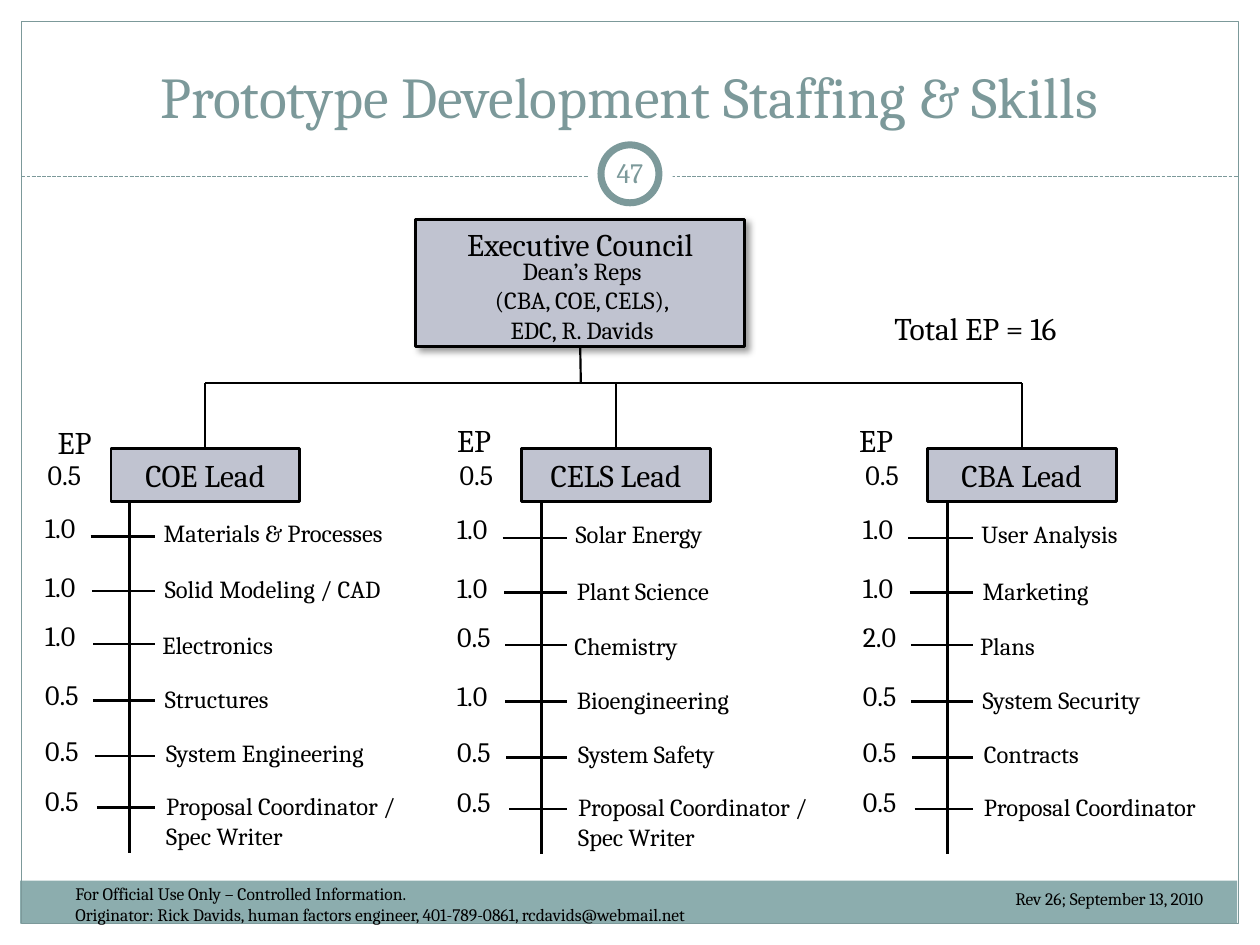
from dataclasses import dataclass

from lxml.etree import SubElement
from pptx import Presentation
from pptx.dml.color import RGBColor
from pptx.enum.dml import MSO_LINE
from pptx.enum.shapes import MSO_CONNECTOR, MSO_SHAPE
from pptx.enum.text import MSO_ANCHOR, MSO_AUTO_SIZE, PP_ALIGN
from pptx.oxml import parse_xml
from pptx.oxml.ns import nsdecls, qn
from pptx.util import Inches, Pt


@dataclass(frozen=True)
class Theme:
    font: str = "Cambria"
    teal: RGBColor = RGBColor(0x7C, 0x99, 0x9A)
    band: RGBColor = RGBColor(0x8C, 0xAD, 0xAE)
    box: RGBColor = RGBColor(0xC0, 0xC3, 0xD0)
    white: RGBColor = RGBColor(0xFF, 0xFF, 0xFF)
    black: RGBColor = RGBColor(0, 0, 0)
    title: int = 33
    heading: int = 18
    value: int = 16
    label: int = 14
    footer: int = 10


theme = Theme()
presentation = Presentation()
presentation.slide_width = Inches(10)
presentation.slide_height = Inches(7.5)
slide = presentation.slides.add_slide(presentation.slide_layouts[5])
shapes = slide.shapes


def write(shape, lines, size, color=theme.black, align=PP_ALIGN.LEFT, anchor=MSO_ANCHOR.TOP):
    """Fill a shape with one paragraph per line."""
    frame = shape.text_frame
    frame.word_wrap = True
    frame.auto_size = MSO_AUTO_SIZE.NONE
    frame.vertical_anchor = anchor
    for index, line in enumerate(lines):
        paragraph = frame.add_paragraph() if index else frame.paragraphs[0]
        paragraph.alignment = align
        run = paragraph.add_run()
        run.text = line
        run.font.name = theme.font
        run.font.size = Pt(size)
        run.font.color.rgb = color


def add_line(x1, y1, x2, y2, width, color=theme.black):
    line = shapes.add_connector(
        MSO_CONNECTOR.STRAIGHT, Inches(x1), Inches(y1), Inches(x2), Inches(y2))
    line.line.width = Pt(width)
    line.line.color.rgb = color
    SubElement(line.element.spPr, qn("a:effectLst"))
    return line


# Title
title = shapes.title
title.left, title.top = Inches(0.33), Inches(0.25)
title.width, title.height = Inches(9.33), Inches(0.83)
write(title, ["Prototype Development Staffing & Skills"], theme.title,
      theme.teal, PP_ALIGN.CENTER, MSO_ANCHOR.BOTTOM)

# Footer band, slide frame, divider and number badge
divider = add_line(0.17, 1.4, 9.83, 1.4, 0.75, theme.teal)
divider.line.dash_style = MSO_LINE.SQUARE_DOT
for kind, left, top, width, height, fill, line_width in [
    (MSO_SHAPE.RECTANGLE, 0.16, 6.99, 9.66, 0.34, theme.band, 0),
    (MSO_SHAPE.RECTANGLE, 0.17, 0.17, 9.66, 7.16, None, 0.75),
    (MSO_SHAPE.OVAL, 4.67, 1.05, 0.67, 0.67, theme.white, 0),
    (MSO_SHAPE.OVAL, 4.77, 1.15, 0.46, 0.46, theme.white, 4),
]:
    shape = shapes.add_shape(kind, Inches(left), Inches(top), Inches(width), Inches(height))
    shape.shadow.inherit = False
    if fill is None:
        shape.fill.background()
    else:
        shape.fill.solid()
        shape.fill.fore_color.rgb = fill
    if line_width:
        shape.line.color.rgb = theme.teal
        shape.line.width = Pt(line_width)
    else:
        shape.line.fill.background()

number = shapes.add_textbox(Inches(4.75), Inches(1.13), Inches(0.5), Inches(0.48))
frame = number.text_frame
frame.margin_left = frame.margin_right = frame.margin_top = frame.margin_bottom = Inches(0.05)
write(number, ["47"], theme.value, theme.teal, PP_ALIGN.CENTER, MSO_ANCHOR.MIDDLE)

# Organisation boxes
boxes = {}
for name, left, top, width, height, anchor in [
    ("Executive Council", 3.3, 1.74, 2.61, 1.01, MSO_ANCHOR.TOP),
    ("COE Lead", 0.88, 3.56, 1.5, 0.42, MSO_ANCHOR.MIDDLE),
    ("CELS Lead", 4.14, 3.56, 1.5, 0.42, MSO_ANCHOR.MIDDLE),
    ("CBA Lead", 7.36, 3.56, 1.5, 0.42, MSO_ANCHOR.MIDDLE),
]:
    box = shapes.add_shape(
        MSO_SHAPE.RECTANGLE, Inches(left), Inches(top), Inches(width), Inches(height))
    box.shadow.inherit = False
    box.fill.solid()
    box.fill.fore_color.rgb = theme.box
    box.line.color.rgb = theme.black
    box.line.width = Pt(1.5)
    write(box, [name], theme.heading, align=PP_ALIGN.CENTER, anchor=anchor)
    boxes[name] = box

council = boxes["Executive Council"]
council.element.spPr.find(qn("a:effectLst")).append(parse_xml(
    f'<a:outerShdw {nsdecls("a")} blurRad="50800" dist="38100" dir="2700000">'
    '<a:srgbClr val="000000"><a:alpha val="40000"/></a:srgbClr></a:outerShdw>'))

# Lines from the council to the leads
bus_y = 3.04
add_line(1.63, bus_y, 8.11, bus_y, 1.25)
add_line(4.61, 2.75, 4.61, bus_y, 1.25).begin_connect(council, 2)
for name, x in [("COE Lead", 1.63), ("CELS Lead", 4.89), ("CBA Lead", 8.11)]:
    add_line(x, bus_y, x, 3.56, 1.25).end_connect(boxes[name], 0)

# Staff columns: trunk x, downward shift, EP heading place, (EP, skill) rows
columns = [
    (1.03, 0, 0.36, 3.31, [
        ("1.0", ["Materials & Processes"]), ("1.0", ["Solid Modeling / CAD"]),
        ("1.0", ["Electronics"]), ("0.5", ["Structures"]),
        ("0.5", ["System Engineering"]),
        ("0.5", ["Proposal Coordinator /", "Spec Writer"])]),
    (4.3, 0.01, 3.53, 3.29, [
        ("1.0", ["Solar Energy"]), ("1.0", ["Plant Science"]),
        ("0.5", ["Chemistry"]), ("1.0", ["Bioengineering"]),
        ("0.5", ["System Safety"]),
        ("0.5", ["Proposal Coordinator /", "Spec Writer"])]),
    (7.52, 0.01, 6.72, 3.29, [
        ("1.0", ["User Analysis"]), ("1.0", ["Marketing"]),
        ("2.0", ["Plans"]), ("0.5", ["System Security"]),
        ("0.5", ["Contracts"]), ("0.5", ["Proposal Coordinator"])]),
]
# Per row: tick y, tick reach to the left, label indent, label top, value top
rows = [
    (4.26, 0.31, 0.17, 4.06, 4.0),
    (4.69, 0.3, 0.18, 4.51, 4.47),
    (5.11, 0.29, 0.16, 4.95, 4.86),
    (5.56, 0.29, 0.18, 5.38, 5.33),
    (6.0, 0.28, 0.19, 5.81, 5.77),
    (6.41, 0.26, 0.19, 6.23, 6.17),
]
# Free texts: left, top, width, height, lines, size, alignment
texts = [
    (3.66, 1.98, 1.92, 0.81, ["Dean’s Reps", "(CBA, COE, CELS),", "EDC, R. Davids"],
     theme.label, PP_ALIGN.CENTER),
    (7, 2.4, 1.7, 0.4, ["Total EP = 16"], theme.heading, PP_ALIGN.LEFT),
    (0.5, 6.96, 7.08, 0.37, [
        "For Official Use Only – Controlled Information.",
        "Originator: Rick Davids, human factors engineer, 401-789-0861, rcdavids@webmail.net"],
     theme.footer, PP_ALIGN.LEFT),
    (7.96, 7, 2.03, 0.3, ["Rev 26; September 13, 2010"], theme.footer, PP_ALIGN.LEFT),
]
for trunk, shift, heading_left, heading_top, staff in columns:
    add_line(trunk, 3.98, trunk, 6.77 + shift, 1.5)
    texts.append((heading_left, heading_top, 0.52, 0.4, ["EP"], theme.heading, PP_ALIGN.LEFT))
    texts.append((trunk - 0.75, 3.58, 0.54, 0.37, ["0.5"], theme.value, PP_ALIGN.LEFT))
    for (value, skill), (tick, reach, indent, label_top, value_top) in zip(staff, rows):
        add_line(trunk - reach, tick + shift, trunk + 0.2, tick + shift, 1.5)
        texts.append((trunk - 0.77, value_top + shift, 0.54, 0.37,
                      [value], theme.value, PP_ALIGN.LEFT))
        texts.append((trunk + indent, label_top + shift, 2.21, 0.1 + 0.24 * len(skill),
                      skill, theme.label, PP_ALIGN.LEFT))

for left, top, width, height, lines, size, align in texts:
    text = shapes.add_textbox(Inches(left), Inches(top), Inches(width), Inches(height))
    write(text, lines, size, align=align)

presentation.save("out.pptx")
